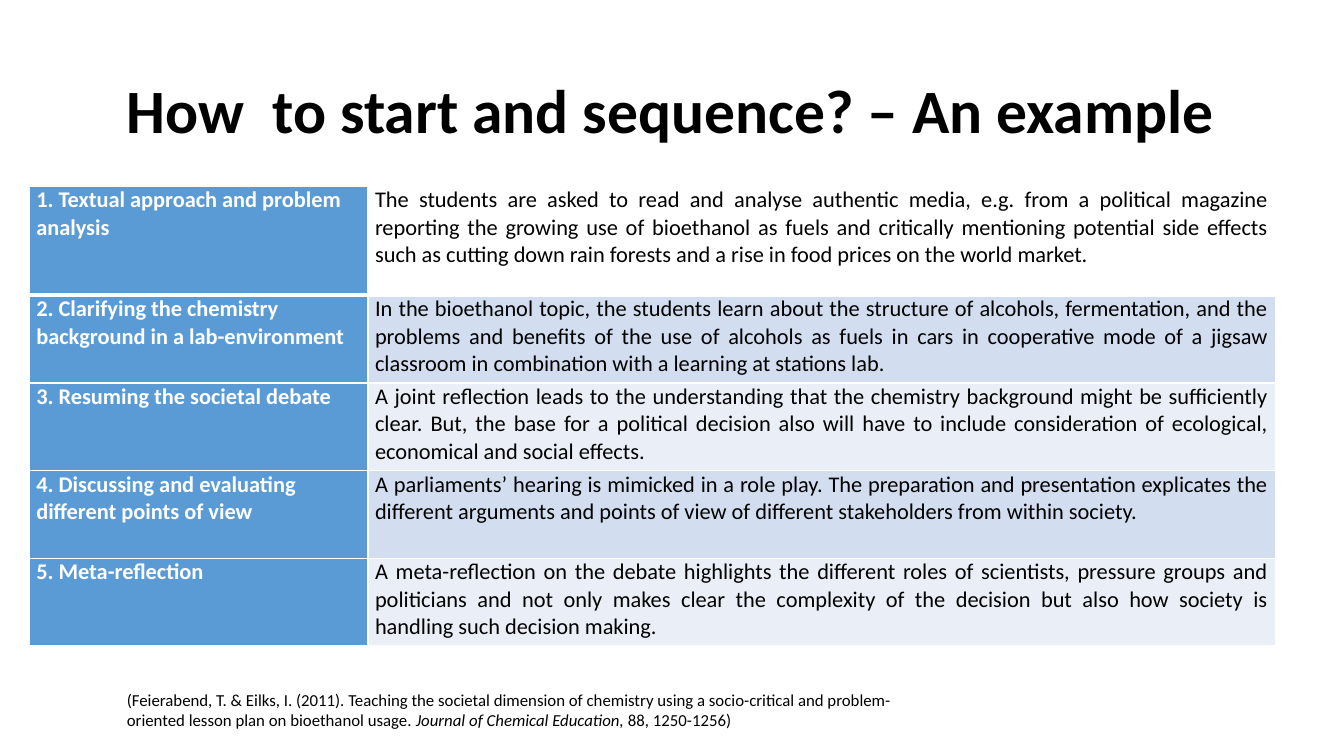
from dataclasses import dataclass

from lxml import etree
from pptx import Presentation
from pptx.dml.color import RGBColor
from pptx.enum.text import MSO_ANCHOR, PP_ALIGN
from pptx.oxml.ns import qn
from pptx.util import Inches, Pt

LEFT, CENTER, JUSTIFY = PP_ALIGN.LEFT, PP_ALIGN.CENTER, PP_ALIGN.JUSTIFY
TOP, MIDDLE = MSO_ANCHOR.TOP, MSO_ANCHOR.MIDDLE
FONT = "Calibri"
BLACK, WHITE, BLUE = "000000", "FFFFFF", "5B9BD5"
BANDS = ("EAEFF7", "D2DEEF")
COLUMN_WIDTHS = (3.36, 9)
FIRST_ROW_HEIGHT, ROW_HEIGHT = 1.08, 0.87


@dataclass
class Step:
    name: str
    description: str


STEPS = [
    Step("1. Textual approach and problem analysis",
         "The students are asked to read and analyse authentic media, e.g. from a political "
         "magazine reporting the growing use of bioethanol as fuels and critically mentioning "
         "potential side effects such as cutting down rain forests and a rise in food prices "
         "on the world market."),
    Step("2. Clarifying the chemistry background in a lab-environment",
         "In the bioethanol topic, the students learn about the structure of alcohols, "
         "fermentation, and the problems and benefits of the use of alcohols as fuels in cars "
         "in cooperative mode of a jigsaw classroom in combination with a learning at stations "
         "lab."),
    Step("3. Resuming the societal debate",
         "A joint reflection leads to the understanding that the chemistry background might be "
         "sufficiently clear. But, the base for a political decision also will have to include "
         "consideration of ecological, economical and social effects."),
    Step("4. Discussing and evaluating different points of view",
         "A parliaments’ hearing is mimicked in a role play. The preparation and presentation "
         "explicates the different arguments and points of view of different stakeholders from "
         "within society."),
    Step("5. Meta-reflection",
         "A meta-reflection on the debate highlights the different roles of scientists, "
         "pressure groups and politicians and not only makes clear the complexity of the "
         "decision but also how society is handling such decision making."),
]


def rgb(value: str) -> RGBColor:
    return RGBColor.from_string(value)


def add_text(p, text: str, size: float = 16, color: str = BLACK, bold: bool = False,
             italic: bool = False, align=LEFT) -> None:
    p.alignment = align
    r = p.add_run()
    r.text = text
    r.font.name, r.font.size = FONT, Pt(size)
    r.font.bold, r.font.italic = bold, italic
    r.font.color.rgb = rgb(color)


def set_borders(cell, top: float, bottom: float) -> None:
    tcPr = cell._tc.get_or_add_tcPr()
    for side, width in (("L", 1), ("R", 1), ("T", top), ("B", bottom)):
        ln = etree.SubElement(tcPr, qn(f"a:ln{side}"), w=str(Pt(width)))
        fill = etree.SubElement(ln, qn("a:solidFill"))
        etree.SubElement(fill, qn("a:srgbClr"), val=WHITE)


def fill_cell(cell, row: int, text: str, fill: str, **text_format) -> None:
    set_borders(cell, top=3 if row == 1 else 1, bottom=3 if row == 0 else 1)
    cell.fill.solid()
    cell.fill.fore_color.rgb = rgb(fill)
    cell.margin_left = cell.margin_right = Inches(0.07)
    cell.margin_top = cell.margin_bottom = 0
    cell.vertical_anchor = TOP
    p = cell.text_frame.paragraphs[0]
    p.space_after = Pt(3)
    add_text(p, text, **text_format)


def add_title(s) -> None:
    title = s.shapes.title
    title.left, title.top = Inches(0.4), Inches(0.4)
    title.width, title.height = Inches(12.51), Inches(1.45)
    tf = title.text_frame
    tf.word_wrap = True
    tf.vertical_anchor = MIDDLE
    p = tf.paragraphs[0]
    p.line_spacing = 0.9
    add_text(p, "How  to start and sequence? – An example", size=44, bold=True, align=CENTER)


def add_steps(s) -> None:
    height = FIRST_ROW_HEIGHT + ROW_HEIGHT * (len(STEPS) - 1)
    table = s.shapes.add_table(len(STEPS), 2, Inches(0.29), Inches(1.85),
                               Inches(sum(COLUMN_WIDTHS)), Inches(height)).table
    for column, width in zip(table.columns, COLUMN_WIDTHS):
        column.width = Inches(width)
    for i, step in enumerate(STEPS):
        table.rows[i].height = Inches(ROW_HEIGHT if i else FIRST_ROW_HEIGHT)
        fill_cell(table.cell(i, 0), i, step.name, BLUE, color=WHITE, bold=True)
        fill_cell(table.cell(i, 1), i, step.description, BANDS[i % 2] if i else WHITE,
                  align=JUSTIFY)


def add_citation(s) -> None:
    tf = s.shapes.add_textbox(Inches(1.16), Inches(6.79), Inches(7.99), Inches(0.5)).text_frame
    tf.word_wrap = True
    p = tf.paragraphs[0]
    add_text(p, "(Feierabend, T. & Eilks, I. (2011). Teaching the societal dimension of chemistry "
                "using a socio-critical and problem-oriented lesson plan on bioethanol usage. ",
             size=12)
    add_text(p, "Journal of Chemical Education, ", size=12, italic=True)
    add_text(p, "88, 1250-1256)", size=12)


def main() -> None:
    prs = Presentation()
    prs.slide_width, prs.slide_height = Inches(13.33), Inches(7.5)
    s = prs.slides.add_slide(prs.slide_layouts[5])
    add_title(s)
    add_steps(s)
    add_citation(s)
    prs.save("out.pptx")


if __name__ == "__main__":
    main()
